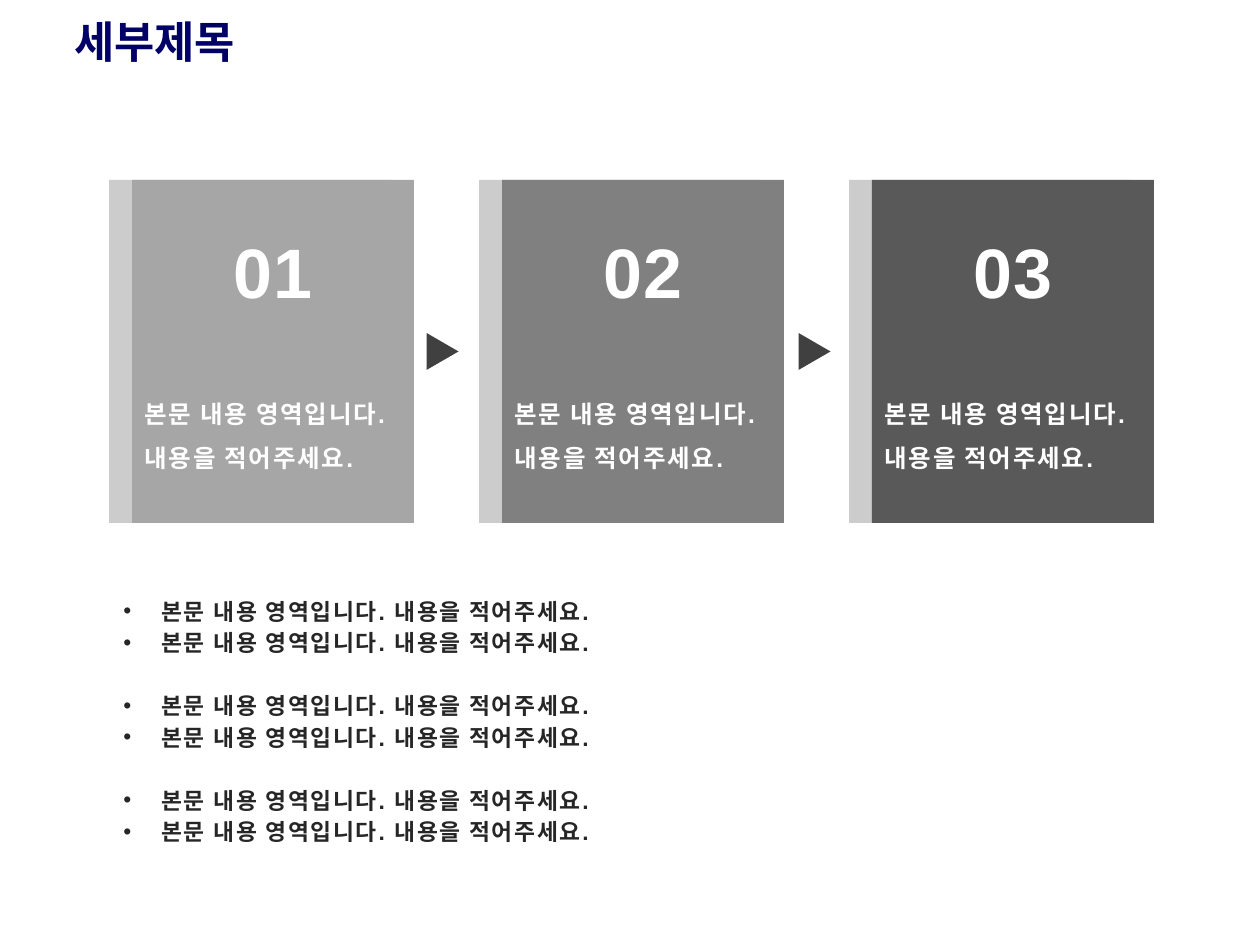
from lxml.etree import SubElement
from pptx import Presentation
from pptx.dml.color import RGBColor
from pptx.enum.shapes import MSO_SHAPE as Shape
from pptx.enum.text import MSO_ANCHOR as Anchor, PP_ALIGN as Align
from pptx.oxml.ns import qn
from pptx.util import Emu, Pt

WIDTH, HEIGHT = 1260, 945
SCALE = 9144000 / WIDTH

NAVY = RGBColor(0x00, 0x00, 0x66)
WHITE = RGBColor(0xFF, 0xFF, 0xFF)
INK = RGBColor(0x26, 0x26, 0x26)
ARROW_GRAY = RGBColor(0x40, 0x40, 0x40)
PANEL_GRAYS = [RGBColor(0xA6, 0xA6, 0xA6), RGBColor(0x80, 0x80, 0x80),
               RGBColor(0x59, 0x59, 0x59)]

BODY = "본문 내용 영역입니다. 내용을 적어주세요."


def px(length):
    return Emu(round(length * SCALE))


def add_box(slide, left, top, width, height):
    """Add a wrapping text box and return its text frame."""
    box = slide.shapes.add_textbox(px(left), px(top), px(width), px(height))
    box.text_frame.word_wrap = True
    return box.text_frame


def style(paragraph, size, color, face="Arial", spacing=100):
    """Set the bold font; spacing is in hundredths of a point."""
    font = paragraph.font
    font.name, font.size, font.bold = face, Pt(size), True
    font.color.rgb = color
    defaults = paragraph._p.get_or_add_pPr().find(qn("a:defRPr"))
    defaults.set("spc", str(spacing))


def add_solid(slide, kind, left, top, width, height, color):
    solid = slide.shapes.add_shape(kind, px(left), px(top), px(width), px(height))
    solid.shadow.inherit = False
    solid.fill.solid()
    solid.fill.fore_color.rgb = color
    solid.line.fill.background()
    return solid


def add_left_shadow(shape):
    """Cast a hard, translucent gray shadow to the left."""
    effects = shape._element.spPr.find(qn("a:effectLst"))
    shadow = SubElement(effects, qn("a:outerShdw"), dist=str(Pt(13)),
                        dir="10800000", algn="ctr", rotWithShape="0")
    gray = SubElement(shadow, qn("a:srgbClr"), val="808080")
    SubElement(gray, qn("a:alpha"), val="40000")


def add_title(slide, left, top, width, height):
    frame = add_box(slide, left, top, width, height)
    frame.vertical_anchor = Anchor.MIDDLE
    title = frame.paragraphs[0]
    title.text = "세부제목"
    title.line_spacing = 0.9
    title._p.get_or_add_pPr().set("indent", str(px(62)))
    style(title, 25, NAVY, "Calibri", 0)


def add_panel(slide, left, top, width, height, number, color):
    panel = add_solid(slide, Shape.RECTANGLE, left, top, width, height, color)
    add_left_shadow(panel)

    heading = add_box(slide, left, top + 42, width, 97).paragraphs[0]
    heading.text = f"{number:02d}"
    heading.alignment = Align.CENTER
    style(heading, 40, WHITE)

    body = add_box(slide, left, top + 198, width, 96).paragraphs[0]
    body.text = BODY
    body.line_spacing = 1.5
    style(body, 14, WHITE)


def add_process(slide, left, top, width, height):
    """Lay out the numbered panels with an arrow between neighbours."""
    step = 370
    panel_width = width - step * (len(PANEL_GRAYS) - 1)
    for index, color in enumerate(PANEL_GRAYS):
        add_panel(slide, left + index * step, top, panel_width, height,
                  index + 1, color)
    for index in range(len(PANEL_GRAYS) - 1):
        arrow = add_solid(slide, Shape.ISOSCELES_TRIANGLE, left + 292 + index * 372,
                          top + (height - 32) / 2, 37, 32, ARROW_GRAY)
        arrow.rotation = 90


def add_bullets(slide, left, top, width, height, groups=3, per_group=2):
    frame = add_box(slide, left, top, width, height)
    for index in range(groups * per_group):
        item = frame.add_paragraph() if index else frame.paragraphs[0]
        item.text = BODY
        item.line_spacing = Pt(18)
        if index and index % per_group == 0:
            item.space_before = Pt(18)
        properties = item._p.get_or_add_pPr()
        properties.set("marL", str(px(38)))
        properties.set("indent", str(px(-38)))
        SubElement(properties, qn("a:buFont"), typeface="Arial")
        SubElement(properties, qn("a:buChar"), char="•")
        style(item, 13, INK)


def main():
    deck = Presentation()
    deck.slide_width, deck.slide_height = px(WIDTH), px(HEIGHT)
    slide = deck.slides.add_slide(deck.slide_layouts[6])
    add_title(slide, 0, 0, 1086, 88)
    add_process(slide, 132, 180, 1022, 343)
    add_bullets(slide, 111, 587, 815, 267)
    deck.save("out.pptx")


if __name__ == "__main__":
    main()
